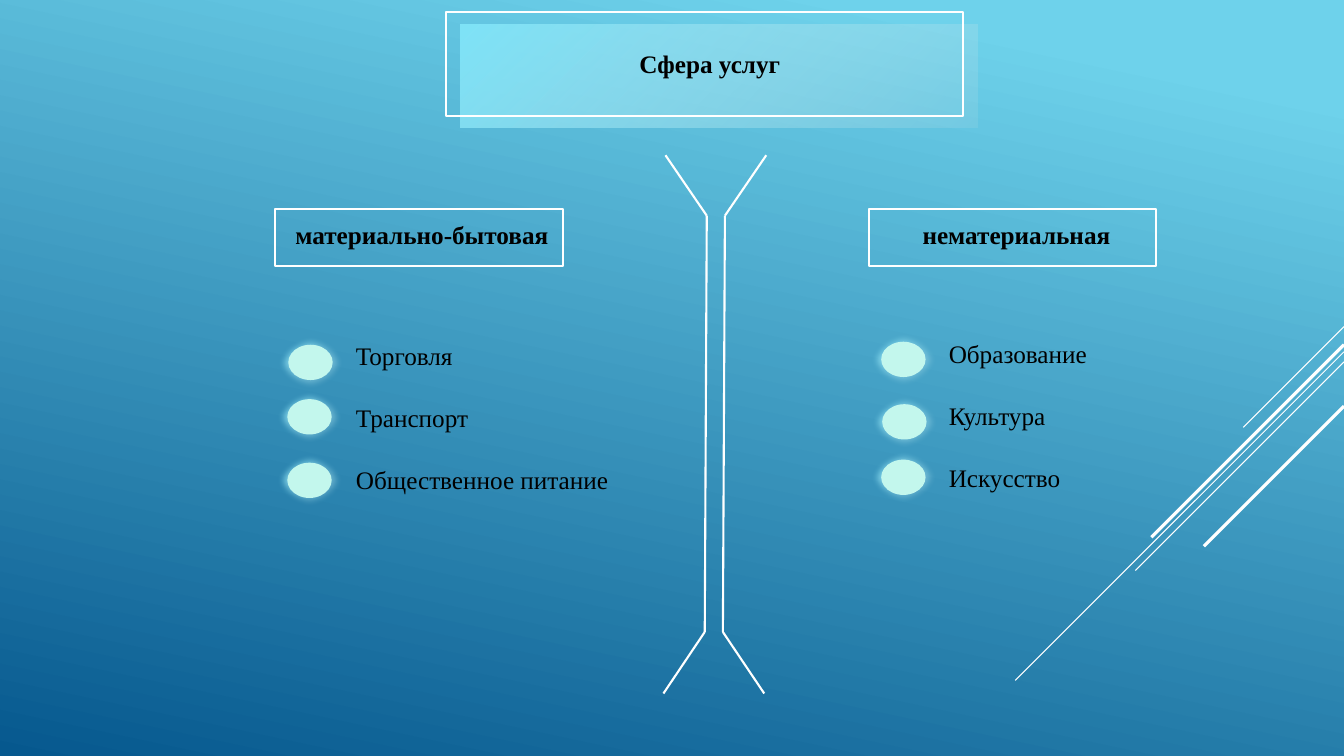
from collections import namedtuple
from dataclasses import dataclass

from lxml import etree
from pptx import Presentation
from pptx.dml.color import RGBColor
from pptx.enum.shapes import MSO_CONNECTOR, MSO_SHAPE
from pptx.enum.text import MSO_ANCHOR, MSO_AUTO_SIZE, PP_ALIGN
from pptx.oxml.ns import qn
from pptx.util import Inches, Pt

RECTANGLE = MSO_SHAPE.RECTANGLE
OVAL = MSO_SHAPE.OVAL
STRAIGHT = MSO_CONNECTOR.STRAIGHT
TOP = MSO_ANCHOR.TOP
GROW = MSO_AUTO_SIZE.SHAPE_TO_FIT_TEXT
LEFT = PP_ALIGN.LEFT
COMPARISON_LAYOUT = 4

Box = namedtuple("Box", "left top width height")


@dataclass(frozen=True)
class Theme:
    """Colours, font and sizes of the slide."""
    font: str = "Times New Roman"
    size: float = 18
    item_gap: float = 22.5
    ink: str = "000000"
    stroke: str = "FFFFFF"
    thin: float = 0.75
    medium: float = 1.5
    thick: float = 2.25
    sky: str = "6ED2EB"
    deep: str = "06588E"
    glow: str = "80E4F8"
    mist: str = "C0E2E9"
    mist_alpha: int = 15
    dot: str = "C3F7ED"


THEME = Theme()


def inside(box, left, top, width, height):
    """Return a box offset from the corner of another box."""
    return Box(box.left + left, box.top + top, width, height)


def set_gradient(fill, start, end, angle, start_position=0):
    """Give a fill a linear gradient with a clockwise angle."""
    fill.gradient()
    fill.gradient_angle = 360 - angle
    first, last = fill.gradient_stops
    first.color.rgb = RGBColor.from_string(start)
    first.position = start_position
    last.color.rgb = RGBColor.from_string(end)
    last.position = 1


def add_line(slide, start, end, weight):
    """Draw a straight white line between two points."""
    line = slide.shapes.add_connector(
        STRAIGHT, *(Inches(value) for value in (*start, *end)))
    line.line.color.rgb = RGBColor.from_string(THEME.stroke)
    line.line.width = Pt(weight)
    etree.SubElement(line.element.spPr, qn("a:effectLst"))


def add_plain_shape(slide, preset, box):
    """Add a preset shape without shadow, fill or outline."""
    shape = slide.shapes.add_shape(preset, *(Inches(value) for value in box))
    shape.shadow.inherit = False
    shape.fill.background()
    shape.line.fill.background()
    return shape


def add_frame(slide, box):
    """Add an unfilled rectangle with a white outline."""
    frame = add_plain_shape(slide, RECTANGLE, box)
    frame.line.color.rgb = RGBColor.from_string(THEME.stroke)
    frame.line.width = Pt(THEME.medium)


def add_glow(slide, preset, box):
    """Add a shape that fades from bright blue to near transparency."""
    glow = add_plain_shape(slide, preset, box)
    set_gradient(glow.fill, THEME.glow, THEME.mist, 45)
    faded = glow.element.spPr.findall(".//" + qn("a:srgbClr"))[-1]
    etree.SubElement(faded, qn("a:alpha"), val=str(THEME.mist_alpha * 1000))
    return glow


def write_text(placeholder, box, *lines, bold=False, gap=0):
    """Place a placeholder in front of earlier parts and fill in its lines."""
    placeholder.element.getparent().append(placeholder.element)
    placeholder.left, placeholder.top, placeholder.width, placeholder.height = (
        Inches(value) for value in box)
    frame = placeholder.text_frame
    frame.text = "\n".join(lines)
    frame.word_wrap = False
    frame.auto_size = GROW
    frame.vertical_anchor = TOP
    frame.margin_left = frame.margin_right = Inches(0.1)
    frame.margin_top = frame.margin_bottom = Inches(0.05)
    for number, paragraph in enumerate(frame.paragraphs):
        paragraph.alignment = LEFT
        paragraph.space_before = Pt(gap if number else 0)
        properties = paragraph._p.get_or_add_pPr()
        properties.set("marL", "0")
        properties.set("indent", "0")
        etree.SubElement(properties, qn("a:buNone"))
        font = paragraph.runs[0].font
        font.name = THEME.font
        font.size = Pt(THEME.size)
        font.bold = bold
        font.color.rgb = RGBColor.from_string(THEME.ink)


def add_corner_rays(slide, box):
    """Draw the diagonal rays that run from the right edge of the box."""
    rays = ((0, 1, THEME.thin), (0.25, 3.26, THEME.thin), (0.35, 2.07, THEME.thin),
            (0.18, 1.91, THEME.thick), (0.79, 1.39, THEME.thick))
    right = box.left + box.width
    for drop, reach, weight in rays:
        start = box.top + drop
        add_line(slide, (right, start), (right - reach, start + reach), weight)


def add_heading(slide, box, title):
    """Add the title over its offset glowing panel and frame."""
    add_glow(slide, RECTANGLE, inside(box, 0.15, 0.12, box.width, box.height))
    write_text(slide.shapes.title, inside(box, 1.82, 0.31, 1.61, 0.4), title, bold=True)
    add_frame(slide, box)


def add_divider(slide, box):
    """Draw two rails that flare outwards at both ends of the box."""
    rail_left = ((0.02, 0), (0.43, 0.6), (0.41, 4.73), (0, 5.34))
    rail_right = ((1.02, 0), (0.61, 0.6), (0.59, 4.73), (1, 5.34))
    for rail in (rail_left, rail_right):
        points = [(box.left + x, box.top + y) for x, y in rail]
        for start, end in zip(points, points[1:]):
            add_line(slide, start, end, THEME.medium)


def add_bullet_dot(slide, box):
    """Add a pale dot with a soft halo filling the box."""
    halo = add_glow(slide, OVAL, box)
    effects = halo.element.spPr.find(qn("a:effectLst"))
    etree.SubElement(effects, qn("a:softEdge"), rad=str(Pt(5)))
    dot = add_plain_shape(slide, OVAL, inside(box, 0.12, 0.09, 0.44, 0.35))
    dot.fill.solid()
    dot.fill.fore_color.rgb = RGBColor.from_string(THEME.dot)


def add_branch(slide, box, heading, items, label, label_box, list_box, dots):
    """Add one branch: a framed label and a list with glowing dots."""
    write_text(heading, inside(box, *label_box), label, bold=True)
    add_frame(slide, Box(box.left, box.top, box.width, 0.57))
    body, lines = items
    write_text(body, inside(box, *list_box), *lines, gap=THEME.item_gap)
    for x, y in dots:
        add_bullet_dot(slide, inside(box, x, y, 0.69, 0.54))


def build_services_slide(presentation):
    """Build the slide that splits the service sector into two branches."""
    slide = presentation.slides.add_slide(
        presentation.slide_layouts[COMPARISON_LAYOUT])
    set_gradient(slide.background.fill, THEME.sky, THEME.deep, 102, 0.1)
    _, goods_heading, goods_list, culture_heading, culture_list = slide.placeholders
    add_corner_rays(slide, Box(10.07, 3.24, 3.26, 3.51))
    add_heading(slide, Box(4.42, 0.12, 5.13, 1.03), "Сфера услуг")
    add_divider(slide, Box(6.58, 1.54, 1.02, 5.34))
    add_branch(
        slide, Box(2.73, 2.07, 2.85, 2.97), goods_heading,
        (goods_list, ("Торговля", "Транспорт", "Общественное питание")),
        "материально-бытовая", (0.1, 0.06, 2.72, 0.4), (0.7, 1.26, 2.73, 1.62),
        ((0.01, 1.26), (0, 1.8), (0, 2.43)))
    add_branch(
        slide, Box(8.62, 2.07, 2.85, 2.94), culture_heading,
        (culture_list, ("Образование", "Культура", "Искусство")),
        "нематериальная", (0.43, 0.06, 2.15, 0.4), (0.69, 1.24, 1.59, 1.62),
        ((0, 1.23), (0.01, 1.85), (0, 2.4)))


def main():
    """Create the presentation and save it."""
    presentation = Presentation()
    presentation.slide_width = Inches(13.33)
    presentation.slide_height = Inches(7.5)
    build_services_slide(presentation)
    presentation.save("out.pptx")


if __name__ == "__main__":
    main()
